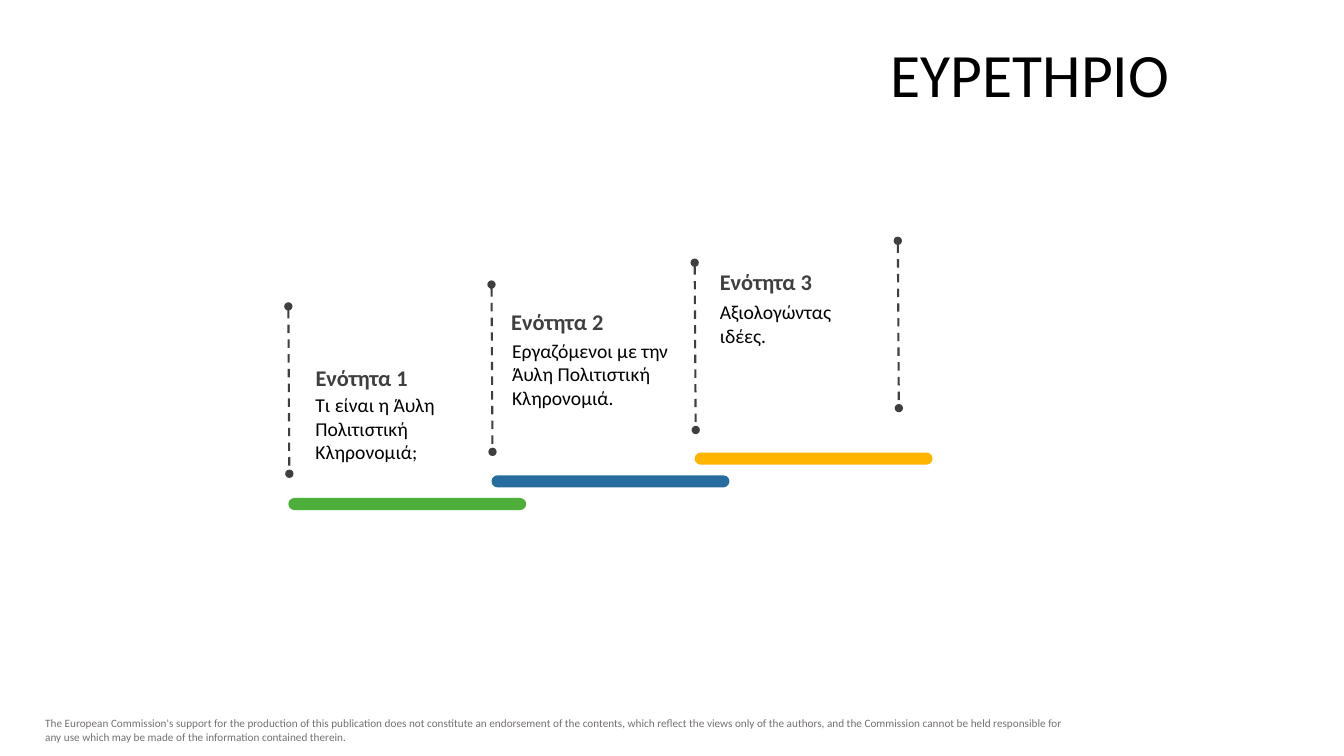
from lxml import etree
from pptx import Presentation
from pptx.dml.color import RGBColor
from pptx.enum.dml import MSO_LINE
from pptx.enum.shapes import MSO_CONNECTOR, MSO_SHAPE
from pptx.enum.text import MSO_ANCHOR, PP_ALIGN
from pptx.oxml.ns import qn
from pptx.util import Inches, Pt

BLACK = RGBColor(0x00, 0x00, 0x00)
DARK_GRAY = RGBColor(0x3F, 0x3F, 0x3F)
NOTE_GRAY = RGBColor(0x75, 0x70, 0x70)
GREEN = RGBColor(0x4E, 0xAE, 0x3A)
BLUE = RGBColor(0x26, 0x6C, 0x9F)
YELLOW = RGBColor(0xFF, 0xB5, 0x00)

FIRST_LEFT, STEP_WIDTH = 2.86, 2.015
MARKER_TOP, MARKER_RISE, MARKER_HEIGHT = 3.04, 0.217, 1.66
BAR_TOP, BAR_RISE = 4.94, 0.225


def style_text(frame, text, size, color, bold=False):
    frame.word_wrap = True
    para = frame.paragraphs[0]
    para.text = text
    para.font.name = "Calibri"
    para.font.size = Pt(size)
    para.font.bold = bold
    para.font.color.rgb = color
    return para


def add_text(position, text, size, color, bold=False, side_inset=0.1):
    frame = slide.shapes.add_textbox(*map(Inches, position)).text_frame
    frame.margin_left = frame.margin_right = Inches(side_inset)
    style_text(frame, text, size, color, bold)


deck = Presentation()
deck.slide_width = Inches(13.33)
deck.slide_height = Inches(7.5)
slide = deck.slides.add_slide(deck.slide_layouts[5])

# Title and disclaimer
title = slide.shapes.title
title.left, title.top = Inches(3.09), Inches(0.37)
title.width, title.height = Inches(8.61), Inches(0.79)
title.text_frame.vertical_anchor = MSO_ANCHOR.MIDDLE
heading = style_text(title.text_frame, "ΕΥΡΕΤΗΡΙΟ", 44, BLACK)
heading.alignment = PP_ALIGN.RIGHT
heading.line_spacing = 0.9

add_text(
    (0.35, 7.06, 10.46, 0.37),
    "The European Commission's support for the production of this publication "
    "does not constitute an endorsement of the contents, which reflect the views "
    "only of the authors, and the Commission cannot be held responsible for any "
    "use which may be made of the information contained therein.",
    8, NOTE_GRAY)

# Units: bar colour, name, name position, topic, topic position
units = [
    (GREEN, "Ενότητα 1", (3.01, 3.56, 1.73, 0.37),
     "Τι είναι η Άυλη Πολιτιστική Κληρονομιά;", (3.03, 3.85, 1.72, 1.04)),
    (BLUE, "Ενότητα 2", (4.95, 3.01, 1.72, 0.37),
     "Εργαζόμενοι με την Άυλη Πολιτιστική Κληρονομιά.", (4.98, 3.31, 1.82, 0.81)),
    (YELLOW, "Ενότητα 3", (7.02, 2.61, 1.73, 0.37),
     "Αξιολογώντας ιδέες.", (7.04, 2.93, 1.72, 0.57)),
]
for step, (color, name, name_position, topic, topic_position) in enumerate(units):
    bar = slide.shapes.add_shape(
        MSO_SHAPE.ROUNDED_RECTANGLE,
        Inches(FIRST_LEFT + step * STEP_WIDTH), Inches(BAR_TOP - step * BAR_RISE),
        Inches(2.36), Inches(0.12))
    bar.adjustments[0] = 0.5
    bar.shadow.inherit = False
    bar.fill.solid()
    bar.fill.fore_color.rgb = color
    bar.line.fill.background()
    add_text(topic_position, topic, 14, BLACK)
    add_text(name_position, name, 16, DARK_GRAY, bold=True, side_inset=0.12)

# Dashed markers on both sides of every unit
for step in range(len(units) + 1):
    left = FIRST_LEFT + step * STEP_WIDTH
    top = MARKER_TOP - step * MARKER_RISE
    marker = slide.shapes.add_connector(
        MSO_CONNECTOR.STRAIGHT, Inches(left), Inches(top),
        Inches(left + 0.01), Inches(top + MARKER_HEIGHT))
    marker.line.color.rgb = DARK_GRAY
    marker.line.width = Pt(1.5)
    marker.line.dash_style = MSO_LINE.DASH
    outline = marker.line._get_or_add_ln()
    for end in ("a:headEnd", "a:tailEnd"):
        etree.SubElement(outline, qn(end), type="oval")
    etree.SubElement(marker._element.spPr, qn("a:effectLst"))

deck.save("out.pptx")
